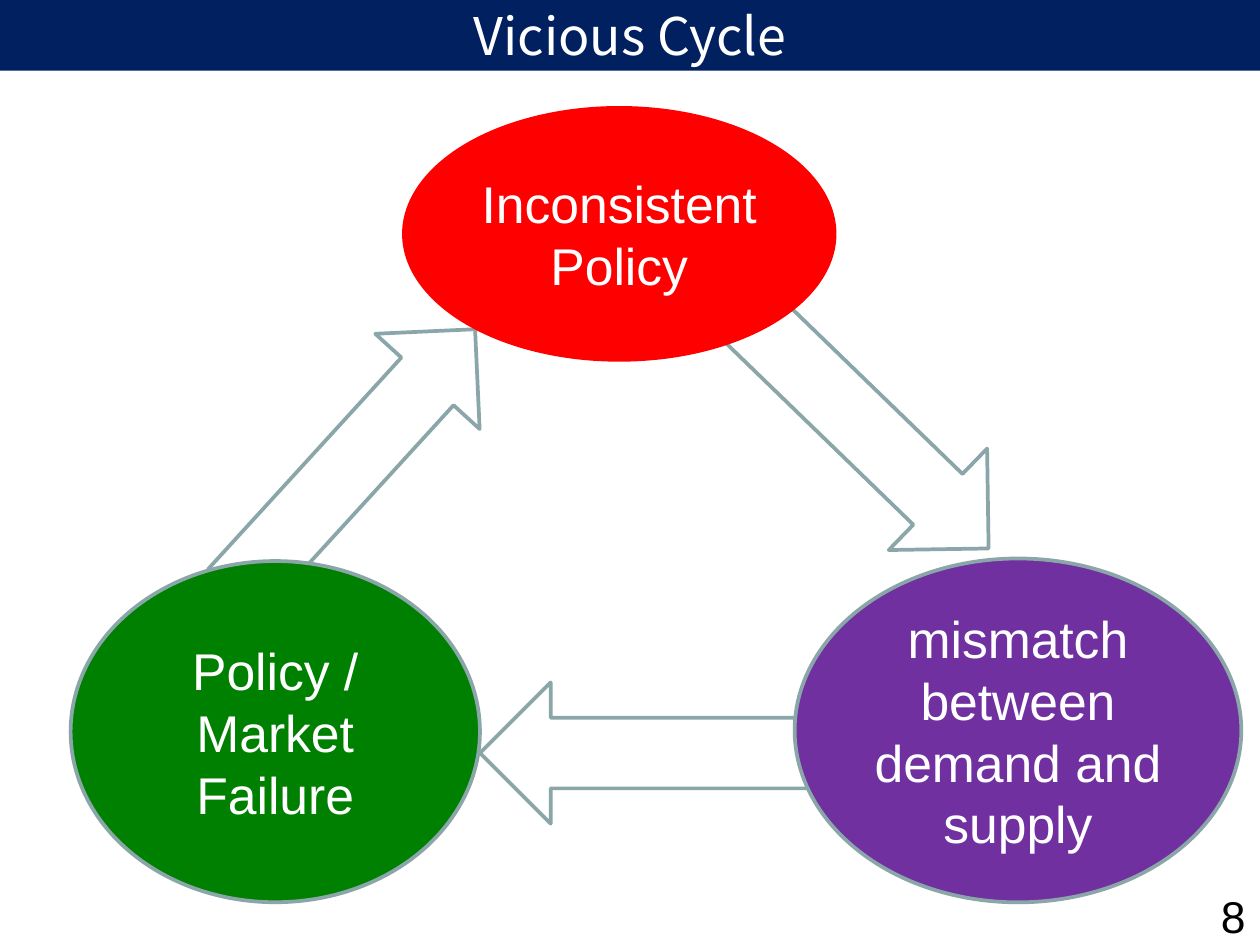
import dataclasses

import pptx
import pptx.dml.color
import pptx.enum.shapes
import pptx.enum.text
import pptx.util

Inches = pptx.util.Inches
Pt = pptx.util.Pt
Kind = pptx.enum.shapes.MSO_SHAPE
Align = pptx.enum.text.PP_ALIGN
Anchor = pptx.enum.text.MSO_ANCHOR


@dataclasses.dataclass(frozen=True)
class Theme:
    navy: str = "002060"
    red: str = "FF0000"
    purple: str = "7030A0"
    green: str = "008000"
    edge: str = "8AA6A8"
    white: str = "FFFFFF"
    black: str = "000000"
    font: str = "Arial"
    head: str = "Noto Sans CJK JP"
    title: float = 28
    label: float = 27.9
    page: float = 24
    line: float = 2


THEME = Theme()


def color(code):
    return pptx.dml.color.RGBColor.from_string(code)


def paint(shape, fill=None, line=None):
    if fill:
        shape.fill.solid()
        shape.fill.fore_color.rgb = color(fill)
    else:
        shape.fill.background()
    if line:
        shape.line.color.rgb = color(line)
        shape.line.width = Pt(THEME.line)
    else:
        shape.line.fill.background()


def write(shape, text, size=THEME.label, font=THEME.font, ink=THEME.white,
          align=Align.CENTER, anchor=Anchor.MIDDLE, wrap=True):
    frame = shape.text_frame
    frame.auto_size = pptx.enum.text.MSO_AUTO_SIZE.NONE
    frame.word_wrap = wrap
    frame.vertical_anchor = anchor
    para = frame.paragraphs[0]
    para.alignment = align
    run = para.add_run()
    run.text = text
    run.font.size = Pt(size)
    run.font.name = font
    run.font.color.rgb = color(ink)


def draw(slide, kind, box, fill=None, line=THEME.edge):
    shape = slide.shapes.add_shape(kind, *map(Inches, box))
    shape.shadow.inherit = False
    paint(shape, fill, line)
    return shape


def arrow(slide, box, turn):
    draw(slide, Kind.RIGHT_ARROW, box).rotation = turn


def stage(slide, text, box, fill, line=THEME.edge):
    """Add one labelled ellipse of the cycle."""
    write(draw(slide, Kind.OVAL, box, fill, line), text)


def banner(slide, text):
    title = slide.shapes.title
    title.left, title.top = Inches(0), Inches(-0.01)
    title.width, title.height = Inches(9.45), Inches(0.54)
    paint(title, THEME.navy)
    write(title, text, size=THEME.title, font=THEME.head, wrap=False)


def number(slide, text):
    box = slide.shapes.add_textbox(
        Inches(7.24), Inches(6.62), Inches(2.2), Inches(0.43))
    write(box, text, size=THEME.page, ink=THEME.black,
          align=Align.RIGHT, anchor=Anchor.TOP)


def main():
    deck = pptx.Presentation()
    deck.slide_width, deck.slide_height = Inches(9.45), Inches(7.09)
    slide = deck.slides.add_slide(deck.slide_layouts.get_by_name("Title Only"))

    banner(slide, "Vicious Cycle")
    arrow(slide, (5.13, 2.66, 2.66, 1.06), 44.1)
    arrow(slide, (3.6, 5.12, 2.67, 1.06), 180)
    arrow(slide, (1.32, 2.93, 2.68, 1.06), 312.4)
    number(slide, "8")
    stage(slide, "Inconsistent Policy", (3.03, 0.81, 3.23, 1.89),
          THEME.red, THEME.red)
    stage(slide, "mismatch between demand and supply",
          (5.96, 4.19, 3.35, 2.58), THEME.purple)
    stage(slide, "Policy / Market Failure", (0.53, 4.21, 3.07, 2.56),
          THEME.green)

    deck.save("out.pptx")


if __name__ == "__main__":
    main()
